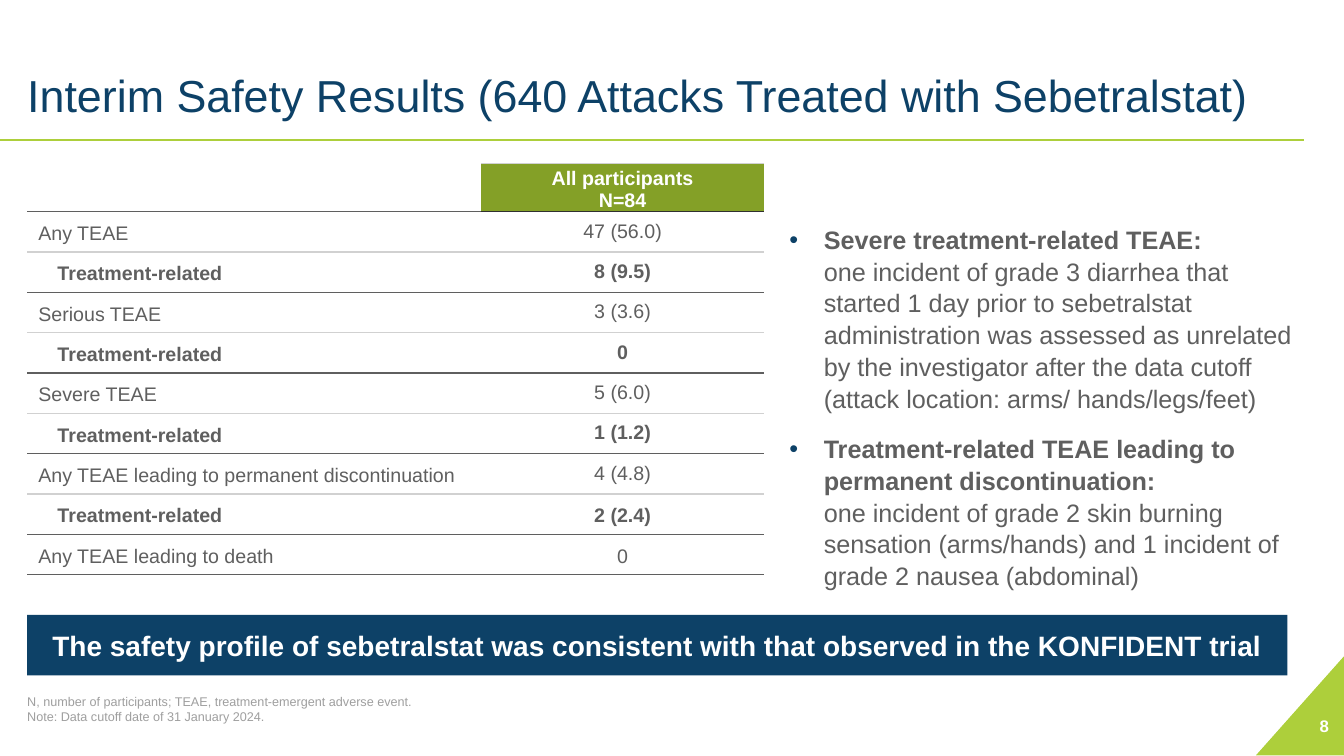
from lxml import etree
from pptx import Presentation
from pptx.dml.color import RGBColor
from pptx.enum.shapes import MSO_CONNECTOR, MSO_SHAPE
from pptx.enum.text import MSO_ANCHOR, MSO_AUTO_SIZE, PP_ALIGN
from pptx.oxml.ns import qn
from pptx.util import Inches, Pt

LEFT, CENTER, RIGHT = PP_ALIGN.LEFT, PP_ALIGN.CENTER, PP_ALIGN.RIGHT
TOP, MIDDLE, BOTTOM = MSO_ANCHOR.TOP, MSO_ANCHOR.MIDDLE, MSO_ANCHOR.BOTTOM
NO_FIT = MSO_AUTO_SIZE.NONE
STRAIGHT = MSO_CONNECTOR.STRAIGHT
RECTANGLE, TRIANGLE = MSO_SHAPE.RECTANGLE, MSO_SHAPE.RIGHT_TRIANGLE

NAVY = RGBColor(0x0D, 0x41, 0x67)
LIME = RGBColor(0xAD, 0xCF, 0x3B)
OLIVE = RGBColor(0x84, 0xA0, 0x27)
GRAY = RGBColor(0x5F, 0x5F, 0x5F)
NOTE_GRAY = RGBColor(0x9F, 0x9F, 0x9F)
RULE_GRAY = RGBColor(0xD1, 0xD1, 0xD1)
HEADER_RULE = RGBColor(0x30, 0x30, 0x30)
WHITE = RGBColor(0xFF, 0xFF, 0xFF)
FONT = "Arial"

TITLE = "Interim Safety Results (640 Attacks Treated with Sebetralstat)"
RELATED = "Treatment-related"
EVENTS = [
    ("Any TEAE", "47 (56.0)"),
    (RELATED, "8 (9.5)"),
    ("Serious TEAE", "3 (3.6)"),
    (RELATED, "0"),
    ("Severe TEAE", "5 (6.0)"),
    (RELATED, "1 (1.2)"),
    ("Any TEAE leading to permanent discontinuation", "4 (4.8)"),
    (RELATED, "2 (2.4)"),
    ("Any TEAE leading to death", "0"),
]
FINDINGS = [
    ("Severe treatment-related TEAE: ",
     "one incident of grade 3 diarrhea that started 1 day prior to sebetralstat "
     "administration was assessed as unrelated by the investigator after the "
     "data cutoff (attack location: arms/ hands/legs/feet)"),
    ("Treatment-related TEAE leading to permanent discontinuation: ",
     "one incident of grade 2 skin burning sensation (arms/hands) and 1 incident "
     "of grade 2 nausea (abdominal)"),
]
NOTES = [
    "N, number of participants; TEAE, treatment-emergent adverse event.",
    "Note: Data cutoff date of 31 January 2024.",
]
BANNER = ("The safety profile of sebetralstat was consistent with that "
          "observed in the KONFIDENT trial")


def add_run(para, text, size, color, bold=False):
    span = para.add_run()
    span.text = text
    span.font.name = FONT
    span.font.size = Pt(size)
    span.font.bold = bold
    span.font.color.rgb = color


def place(shape, left, top, width, height):
    shape.left, shape.top = Inches(left), Inches(top)
    shape.width, shape.height = Inches(width), Inches(height)


def set_frame(frame, anchor, side=0.1, edge=0.05):
    frame.word_wrap = True
    frame.auto_size = NO_FIT
    frame.vertical_anchor = anchor
    frame.margin_left = frame.margin_right = Inches(side)
    frame.margin_top = frame.margin_bottom = Inches(edge)


def write_lines(frame, lines, size, color, bold=False, align=LEFT):
    for index, line in enumerate(lines):
        para = frame.add_paragraph() if index else frame.paragraphs[0]
        para.alignment = align
        para.space_before = Pt(0)
        add_run(para, line, size, color, bold)


def add_text_box(slide, box, lines, size, color, anchor, **style):
    frame = slide.shapes.add_textbox(*map(Inches, box)).text_frame
    set_frame(frame, anchor, *style.pop("insets", ()))
    write_lines(frame, lines, size, color, **style)


def add_filled_shape(slide, kind, box, color):
    shape = slide.shapes.add_shape(kind, *map(Inches, box))
    shape.shadow.inherit = False
    shape.fill.solid()
    shape.fill.fore_color.rgb = color
    shape.line.fill.background()
    return shape


def add_rule(slide, left, right, top):
    rule = slide.shapes.add_connector(
        STRAIGHT, Inches(left), Inches(top), Inches(right), Inches(top))
    rule.line.color.rgb = LIME
    rule.line.width = Pt(2)
    etree.SubElement(rule._element.spPr, qn("a:effectLst"))


def add_bullet(para, color):
    properties = para._p.get_or_add_pPr()
    properties.set("marL", str(Inches(0.34)))
    properties.set("indent", str(-Inches(0.34)))
    bullet_color = etree.SubElement(properties, qn("a:buClr"))
    etree.SubElement(bullet_color, qn("a:srgbClr"), val=str(color))
    etree.SubElement(properties, qn("a:buFont"), typeface=FONT)
    etree.SubElement(properties, qn("a:buChar"), char="•")


def set_borders(cell, top, bottom):
    properties = cell._tc.get_or_add_tcPr()
    for side, color in (("L", None), ("R", None), ("T", top), ("B", bottom)):
        border = etree.SubElement(properties, qn(f"a:ln{side}"), w=str(Pt(1)))
        if color is None:
            etree.SubElement(border, qn("a:noFill"))
        else:
            fill = etree.SubElement(border, qn("a:solidFill"))
            etree.SubElement(fill, qn("a:srgbClr"), val=str(color))


def fill_cell(cell, lines, fill, color, bold, align, anchor, bottom_inset=0):
    cell.margin_left = cell.margin_right = Inches(0.11)
    cell.margin_top = Inches(0.04)
    cell.margin_bottom = Inches(bottom_inset)
    cell.vertical_anchor = anchor
    cell.fill.solid()
    cell.fill.fore_color.rgb = fill
    write_lines(cell.text_frame, lines, 14, color, bold, align)


def add_events_table(slide):
    table = slide.shapes.add_table(
        len(EVENTS) + 1, 2, Inches(0.27), Inches(1.62),
        Inches(7.31), Inches(4.08)).table
    table.first_row = table.horz_banding = False
    table.columns[0].width, table.columns[1].width = Inches(4.5), Inches(2.81)

    # Header row
    table.rows[0].height = Inches(0.48)
    blank, header = table.cell(0, 0), table.cell(0, 1)
    set_borders(blank, None, GRAY)
    blank.fill.background()
    set_borders(header, RULE_GRAY, HEADER_RULE)
    fill_cell(header, ["All participants", "N=84"], OLIVE, WHITE, True, CENTER, TOP)

    # Event rows, each followed by its treatment-related share
    for row, (event, count) in enumerate(EVENTS, start=1):
        table.rows[row].height = Inches(0.4)
        related = event == RELATED
        last = row == len(EVENTS)
        label, value = table.cell(row, 0), table.cell(row, 1)
        for cell in (label, value):
            set_borders(cell, RULE_GRAY if related else GRAY,
                        GRAY if related or last else RULE_GRAY)
        if row == 1:
            value._tc.tcPr.find(f"{qn('a:lnT')}//{qn('a:srgbClr')}").set(
                "val", str(HEADER_RULE))
        fill_cell(label, [event], WHITE, GRAY, related, LEFT, MIDDLE)
        if related:
            label.text_frame.paragraphs[0]._p.pPr.set("marL", str(Inches(0.19)))
        fill_cell(value, [count], WHITE, GRAY, related, CENTER, MIDDLE,
                  0 if row >= len(EVENTS) - 1 else 0.05)


def write_findings(body):
    place(body, 7.83, 2.16, 5.1, 3.87)
    frame = body.text_frame
    set_frame(frame, TOP, side=0)
    for index, (heading, detail) in enumerate(FINDINGS):
        para = frame.add_paragraph() if index else frame.paragraphs[0]
        add_bullet(para, NAVY)
        para.line_spacing = 1.05
        para.space_before = Pt(13.3 if index else 0)
        add_run(para, heading, 18, GRAY, bold=True)
        para.add_line_break()
        add_run(para, detail, 18, GRAY)


def main():
    deck = Presentation()
    deck.slide_width, deck.slide_height = Inches(13.33), Inches(7.5)
    slide = deck.slides.add_slide(deck.slide_layouts[1])

    # Page decoration
    corner = add_filled_shape(slide, TRIANGLE, (12.4, 6.56, 0.99, 0.88), LIME)
    corner.rotation = 270
    add_rule(slide, 0, 12.93, 1.39)

    # Title and findings
    title = slide.shapes.title
    place(title, 0.27, 0.27, 12.5, 0.99)
    set_frame(title.text_frame, BOTTOM, side=0)
    write_lines(title.text_frame, [TITLE], 32, NAVY)
    write_findings(slide.placeholders[1])

    add_events_table(slide)

    # Conclusion banner
    banner = add_filled_shape(slide, RECTANGLE, (0.27, 6.1, 12.5, 0.6), NAVY)
    set_frame(banner.text_frame, MIDDLE)
    write_lines(banner.text_frame, [BANNER], 20, WHITE, True, CENTER)

    # Footnotes and page number
    add_text_box(slide, (0.27, 6.7, 12.18, 0.48), NOTES, 9, NOTE_GRAY, BOTTOM,
                 insets=(0, 0))
    add_text_box(slide, (12.62, 7, 0.66, 0.4), ["8"], 12, WHITE, MIDDLE,
                 bold=True, align=RIGHT)

    deck.save("out.pptx")


if __name__ == "__main__":
    main()
